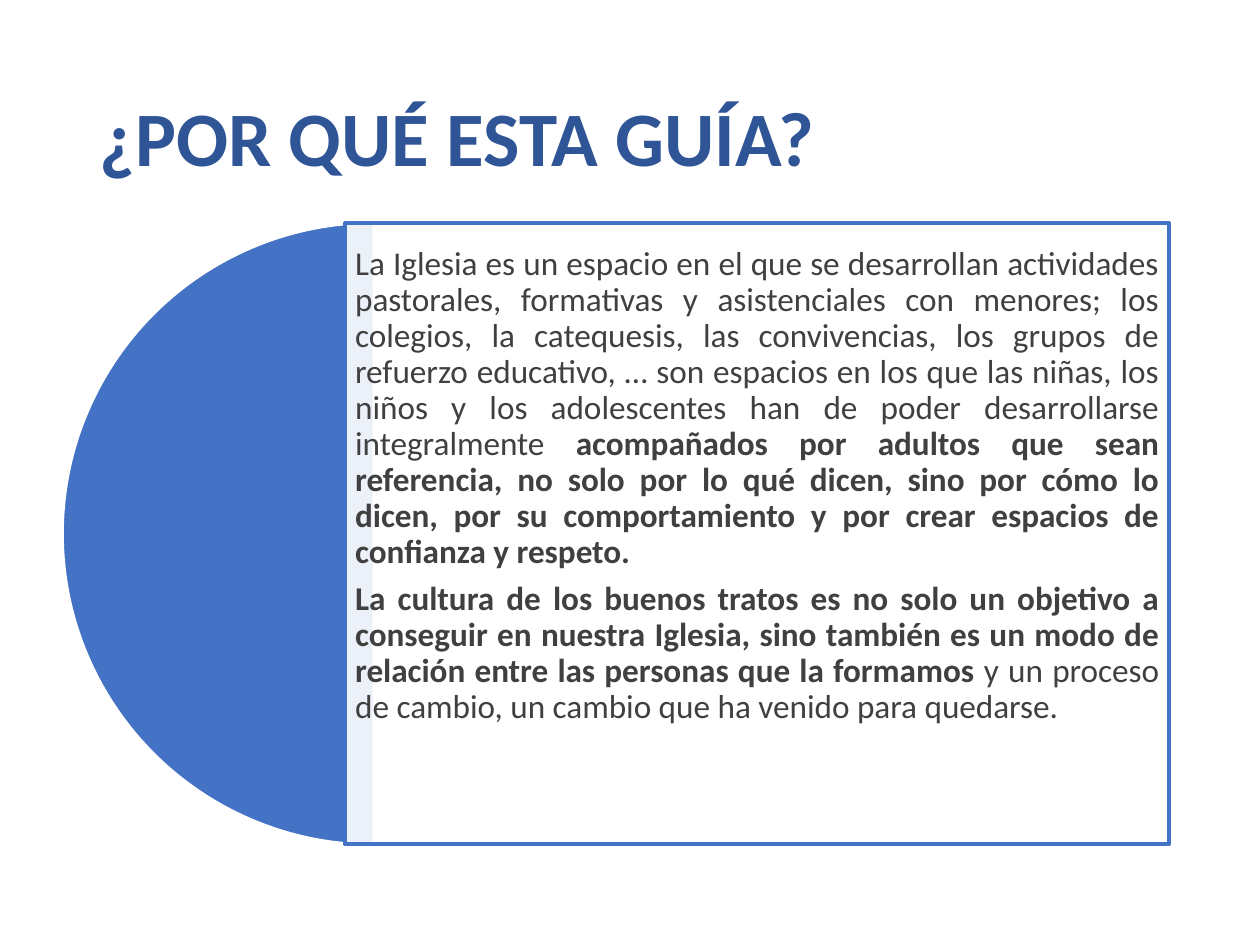
from lxml import etree
from pptx import Presentation
from pptx.dml.color import RGBColor
from pptx.enum.shapes import MSO_SHAPE
from pptx.enum.text import MSO_ANCHOR, PP_ALIGN
from pptx.oxml.ns import qn
from pptx.util import Cm, Pt

PIE = MSO_SHAPE.PIE
RECTANGLE = MSO_SHAPE.RECTANGLE
TOP = MSO_ANCHOR.TOP
MIDDLE = MSO_ANCHOR.MIDDLE
LEFT = PP_ALIGN.LEFT
JUSTIFY = PP_ALIGN.JUSTIFY

BLUE = RGBColor(0x44, 0x72, 0xC4)
DARK_BLUE = RGBColor(0x2F, 0x55, 0x97)
GREY = RGBColor(0x40, 0x40, 0x40)
WHITE = RGBColor(0xFF, 0xFF, 0xFF)

FONT = "Calibri"
PANEL_TOP = Cm(4.5)
PANEL_HEIGHT = Cm(12.52)
TITLE = "¿POR QUÉ ESTA GUÍA?"
REASONS = [
    [
        ("La Iglesia es un espacio en el que se desarrollan actividades pastorales, "
         "formativas y asistenciales con menores; los colegios, la catequesis, las "
         "convivencias, los grupos de refuerzo educativo, … son espacios en los que "
         "las niñas, los niños y los adolescentes han de poder desarrollarse "
         "integralmente ", False),
        ("acompañados por adultos que sean referencia, no solo por lo qué dicen, "
         "sino por cómo lo dicen, por su comportamiento y por crear espacios de "
         "confianza y respeto.", True),
    ],
    [
        ("La cultura de los buenos tratos es no solo un objetivo a conseguir en "
         "nuestra Iglesia, sino también es un modo de relación entre las personas "
         "que la formamos ", True),
        ("y un proceso de cambio, un cambio que ha venido para quedarse.", False),
    ],
]


def format_span(span, size, color, bold):
    span.font.name = FONT
    span.font.size = Pt(size)
    span.font.color.rgb = color
    span.font.bold = bold


def set_title(page):
    title = page.shapes.title
    title.left, title.top = Cm(1.75), Cm(1.02)
    title.width, title.height = Cm(21.9), Cm(3.68)
    frame = title.text_frame
    frame.text = TITLE
    frame.vertical_anchor = MIDDLE
    para = frame.paragraphs[0]
    para.alignment = LEFT
    para.line_spacing = 0.9
    format_span(para.runs[0], 44, DARK_BLUE, True)


def add_panel_shape(page, kind, left, width, fill, line, line_width):
    shape = page.shapes.add_shape(kind, left, PANEL_TOP, width, PANEL_HEIGHT)
    shape.shadow.inherit = False
    shape.fill.solid()
    shape.fill.fore_color.rgb = fill
    shape.line.color.rgb = line
    shape.line.width = Pt(line_width)
    return shape


def set_opacity(shape, percent):
    color = shape.fill._xPr.find(qn("a:solidFill"))[0]
    etree.SubElement(color, qn("a:alpha"), val=str(percent * 1000))


def add_half_disc(page):
    disc = add_panel_shape(page, PIE, Cm(1.27), PANEL_HEIGHT, BLUE, WHITE, 1)
    disc.adjustments[0] = 54
    disc.adjustments[1] = 162


def write_reasons(box):
    frame = box.text_frame
    frame.word_wrap = True
    frame.vertical_anchor = TOP
    frame.margin_left = frame.margin_right = Cm(0.2)
    frame.margin_top = Cm(0.48)
    for index, spans in enumerate(REASONS):
        para = frame.add_paragraph() if index else frame.paragraphs[0]
        para.alignment = JUSTIFY
        para.line_spacing = 0.9
        para.space_after = Pt(6.65)
        for text, bold in spans:
            span = para.add_run()
            span.text = text
            format_span(span, 19, GREY, bold)


def add_reasons_box(page):
    box = add_panel_shape(page, RECTANGLE, Cm(6.96), Cm(16.61), WHITE, BLUE, 2.25)
    set_opacity(box, 90)
    write_reasons(box)


def main():
    deck = Presentation()
    deck.slide_width, deck.slide_height = Cm(25.4), Cm(19.05)
    page = deck.slides.add_slide(deck.slide_layouts[5])
    set_title(page)
    add_half_disc(page)
    add_reasons_box(page)
    deck.save("out.pptx")


if __name__ == "__main__":
    main()
